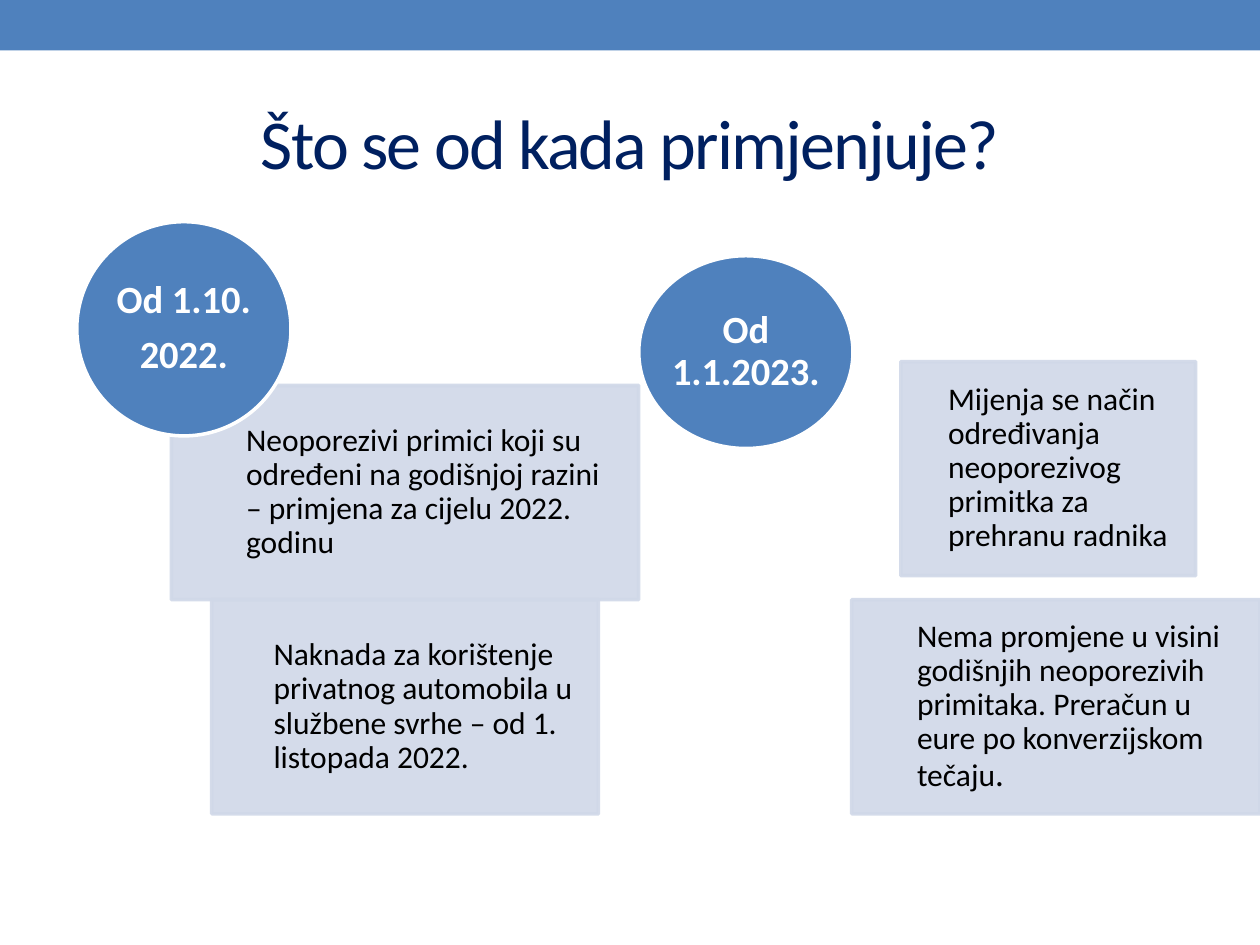
import pptx
import pptx.util
import pptx.dml.color
import pptx.enum.shapes
import pptx.enum.text
import pptx.oxml

Inches, Pt = pptx.util.Inches, pptx.util.Pt
SHAPE = pptx.enum.shapes.MSO_SHAPE
ALIGN = pptx.enum.text.PP_ALIGN
ANCHOR = pptx.enum.text.MSO_ANCHOR

COLORS = {"blue": "4F81BD", "pale": "D0D8E8", "navy": "002060",
          "black": "000000", "white": "FFFFFF"}


class Deck:
    font = "Calibri"

    def __init__(self, width, height):
        self.prs = pptx.Presentation()
        self.prs.slide_width, self.prs.slide_height = Inches(width), Inches(height)
        self.s = self.prs.slides.add_slide(self.prs.slide_layouts[5])

    def color(self, name):
        return pptx.dml.color.RGBColor.from_string(COLORS[name])

    def style(self, font, size, color, bold=False):
        font.name, font.size, font.bold = self.font, Pt(size), bold
        font.color.rgb = self.color(color)

    def shape(self, kind, x, y, w, h, fill, line=None):
        sp = self.s.shapes.add_shape(kind, Inches(x), Inches(y), Inches(w), Inches(h))
        sp.shadow.inherit = False
        sp.fill.solid()
        sp.fill.fore_color.rgb = self.color(fill)
        if line:
            sp.line.color.rgb = self.color(line)
            sp.line.width = Pt(2)
        else:
            sp.line.fill.background()
        return sp

    def text(self, sp, lines, size, color, align, insets, bold=False):
        tf = sp.text_frame
        tf.word_wrap = True
        tf.vertical_anchor = ANCHOR.MIDDLE
        tf.margin_left, tf.margin_top, tf.margin_right, tf.margin_bottom = map(Inches, insets)
        for i, line in enumerate(lines):
            p = tf.add_paragraph() if i else tf.paragraphs[0]
            p.text = line
            p.alignment = align
            p.line_spacing = 0.9
            if i:
                p.space_before = Pt(0.35 * size)
            self.style(p.font, size, color, bold)
        return tf.paragraphs[-1]

    def title(self, text, x, y, w, h):
        sp = self.s.shapes.title
        sp.left, sp.top, sp.width, sp.height = map(Inches, (x, y, w, h))
        sp.text_frame.vertical_anchor = ANCHOR.MIDDLE
        p = sp.text_frame.paragraphs[0]
        p.alignment = ALIGN.CENTER
        r = p.add_run()
        r.text = text
        self.style(p.font, 40, "navy")
        r._r.get_or_add_rPr().set("spc", "-100")

    def box(self, text, x, y, w, h=1.7):
        sp = self.shape(SHAPE.RECTANGLE, x, y, w, h, "pale", "pale")
        for clr in sp._element.spPr.iter(pptx.oxml.ns.qn("a:srgbClr")):
            alpha = clr.makeelement(pptx.oxml.ns.qn("a:alpha"), {"val": "90000"})
            clr.append(alpha)
        return self.text(sp, [text], 18, "black", ALIGN.LEFT,
                         (0.16 * w, 0.14, 0.14, 0.14))

    def circle(self, lines, x, y, h, w=1.7):
        sp = self.shape(SHAPE.OVAL, x, y, w, h, "blue", "white")
        self.text(sp, lines, 22, "white", ALIGN.CENTER, (0, 0, 0, 0), True)


def main():
    deck = Deck(10, 7.5)
    deck.shape(SHAPE.RECTANGLE, 0, 0, 10, 0.4, "blue")
    deck.title("Što se od kada primjenjuje?", 0.5, 0.58, 9, 1.08)

    deck.box("Neoporezivi primici koji su određeni na godišnjoj razini "
             "– primjena za cijelu 2022. godinu", 1.36, 3.06, 3.71)
    deck.box("Naknada za korištenje privatnog automobila u službene svrhe "
             "– od 1. listopada 2022.", 1.68, 4.76, 3.07)
    deck.circle(["Od 1.10.", "2022."], 0.61, 1.76, 1.7)

    deck.box("Mijenja se način određivanja neoporezivog primitka za prehranu radnika",
             7.15, 2.87, 2.34)
    p = deck.box("Nema promjene u visini godišnjih neoporezivih primitaka. "
                 "Preračun u eure po konverzijskom tečaju", 6.76, 4.76, 3.24)
    r = p.add_run()
    r.text = "."
    r.font.size = Pt(20)
    deck.circle(["Od 1.1.2023."], 5.07, 2.03, 1.53)

    deck.prs.save("out.pptx")


if __name__ == "__main__":
    main()
